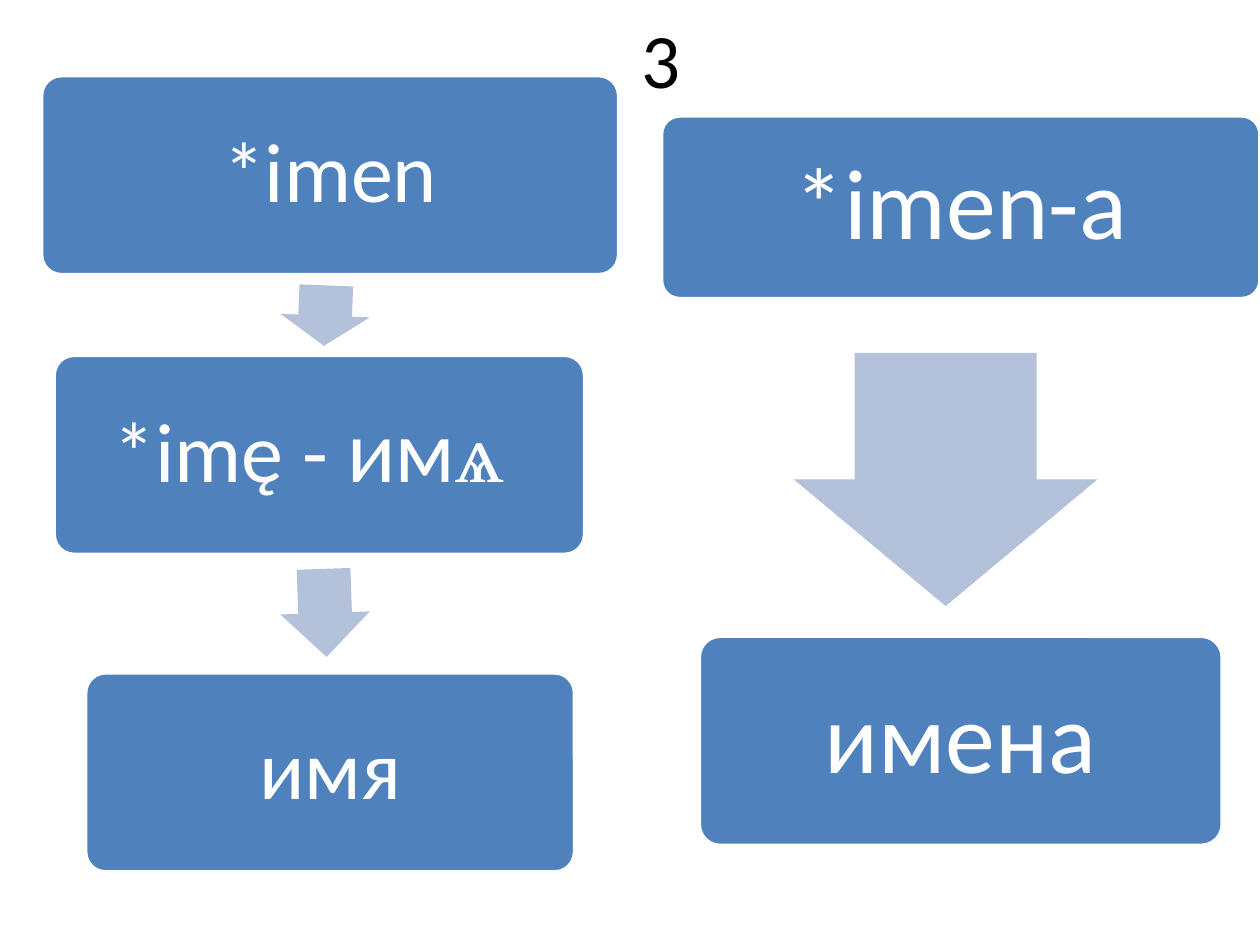
from pptx import Presentation
from pptx.dml.color import RGBColor
from pptx.enum.shapes import MSO_SHAPE
from pptx.enum.text import MSO_ANCHOR, PP_ALIGN
from pptx.util import Inches, Pt

ROUNDED = MSO_SHAPE.ROUNDED_RECTANGLE
ARROW = MSO_SHAPE.RIGHT_ARROW
MIDDLE = MSO_ANCHOR.MIDDLE
CENTER = PP_ALIGN.CENTER

BLACK = RGBColor(0x00, 0x00, 0x00)
WHITE = RGBColor(0xFF, 0xFF, 0xFF)
BLUE = RGBColor(0x4F, 0x81, 0xBD)
PALE_BLUE = RGBColor(0xB3, 0xC1, 0xDB)


def add_run(paragraph, text, size, color, font="Calibri"):
    run = paragraph.add_run()
    run.text = text
    run.font.size = Pt(size)
    run.font.name = font
    run.font.color.rgb = color


prs = Presentation()
prs.slide_width = Inches(10)
prs.slide_height = Inches(7.5)
slide = prs.slides.add_slide(prs.slide_layouts[5])

title = slide.shapes.title
title.left, title.top = Inches(0.5), Inches(0)
title.width, title.height = Inches(9.5), Inches(0.92)
title.text_frame.vertical_anchor = MIDDLE
heading = title.text_frame.paragraphs[0]
heading.alignment = CENTER
add_run(heading, "3", 44, BLACK)

SINGULAR_SIZE, SINGULAR_MARGIN = 48, 0.24
PLURAL_SIZE, PLURAL_MARGIN = 57, 0.29

word_forms = [
    (0.33, 0.6, 4.58, 1.58, SINGULAR_SIZE, SINGULAR_MARGIN, [("*imen", "Calibri")]),
    (0.43, 2.82, 4.21, 1.58, SINGULAR_SIZE, SINGULAR_MARGIN,
     [("*imę - ", "Calibri"), ("им", "Lato"), ("ѧ ", "Times New Roman")]),
    (0.68, 5.34, 3.88, 1.58, SINGULAR_SIZE, SINGULAR_MARGIN, [("имя", "Calibri")]),
    (5.25, 0.92, 4.75, 1.45, PLURAL_SIZE, PLURAL_MARGIN, [("*imen-a", "Calibri")]),
    (5.55, 5.05, 4.15, 1.66, PLURAL_SIZE, PLURAL_MARGIN, [("имена", "Calibri")]),
]
for left, top, width, height, size, margin, parts in word_forms:
    form = slide.shapes.add_shape(
        ROUNDED, Inches(left), Inches(top), Inches(width), Inches(height))
    form.shadow.inherit = False
    form.adjustments[0] = 0.1
    form.fill.solid()
    form.fill.fore_color.rgb = BLUE
    form.line.color.rgb = WHITE
    form.line.width = Pt(2)
    frame = form.text_frame
    frame.word_wrap = True
    frame.vertical_anchor = MIDDLE
    frame.margin_left = frame.margin_right = Inches(margin)
    frame.margin_top = frame.margin_bottom = Inches(margin)
    label = frame.paragraphs[0]
    label.alignment = CENTER
    label.line_spacing = 0.9
    for text, font in parts:
        add_run(label, text, size, WHITE, font)

sound_changes = [
    (2.34, 2.15, 0.48, 0.71, 92.3),
    (2.23, 4.51, 0.7, 0.71, 88),
    (6.5, 2.6, 2.01, 2.41, 90),
]
for left, top, width, height, rotation in sound_changes:
    change = slide.shapes.add_shape(
        ARROW, Inches(left), Inches(top), Inches(width), Inches(height))
    change.shadow.inherit = False
    change.rotation = rotation
    change.adjustments[0] = 0.6
    change.adjustments[1] = 0.5
    change.fill.solid()
    change.fill.fore_color.rgb = PALE_BLUE
    change.line.fill.background()

prs.save("out.pptx")
